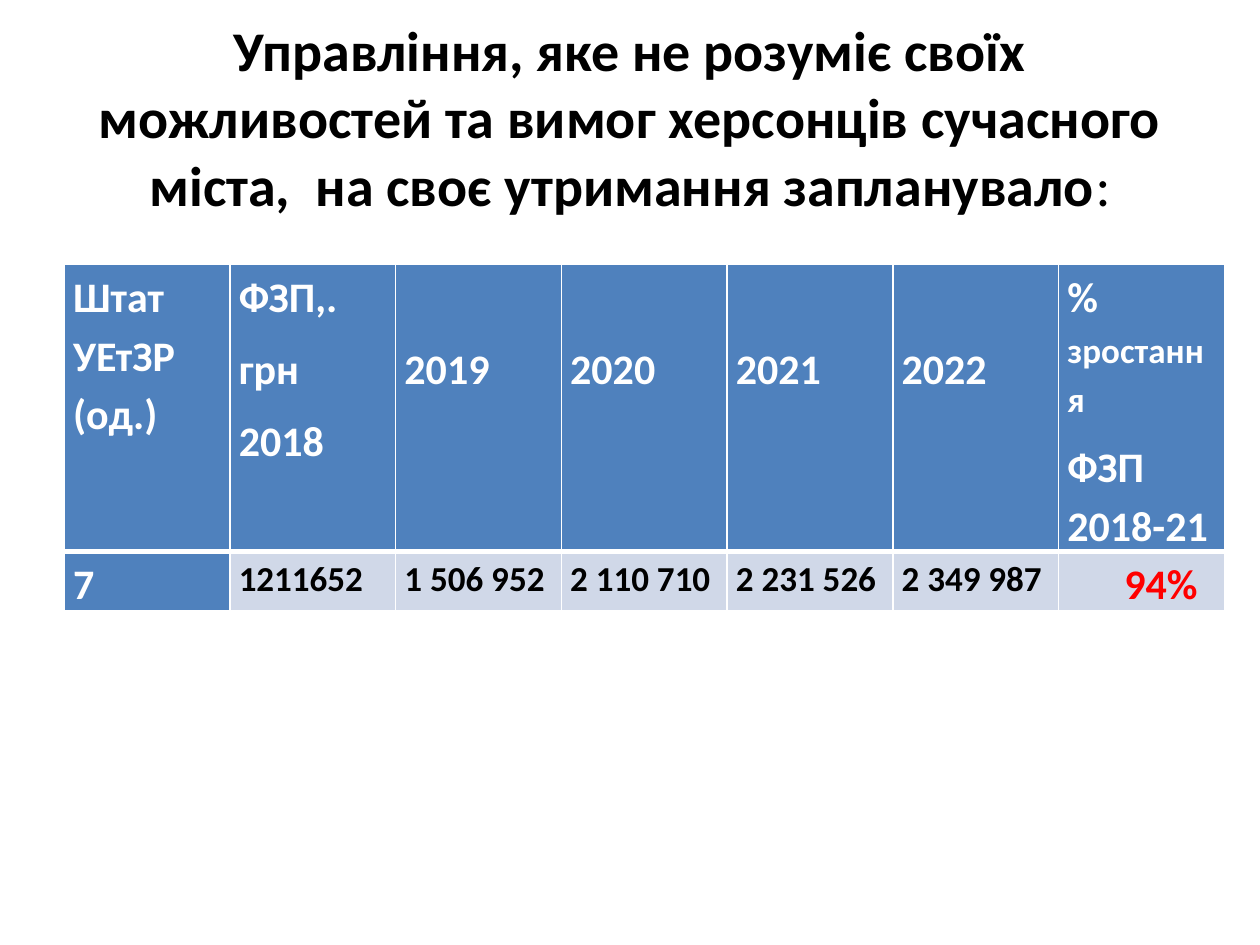
import pptx
import pptx.util
import pptx.dml.color
import pptx.enum.text
import pptx.oxml
import pptx.oxml.ns

Pt = pptx.util.Pt
ALIGN = pptx.enum.text.PP_ALIGN
ANCHOR = pptx.enum.text.MSO_ANCHOR

COLORS = {"black": "000000", "white": "FFFFFF", "red": "FF0000",
          "header": "4F81BD", "body": "D0D8E8"}
FONT = "Calibri"

TITLE = [[("Управління, яке не розуміє своїх можливостей та вимог херсонців "
           "сучасного міста,  на своє утримання запланувало", {}),
          (":", {"bold": False})]]
YEARS = ["2019", "2020", "2021", "2022"]
HEADERS = [
    [[("Штат УЕтЗР (од.)", {})]],
    [[("ФЗП,.", {})], [("грн", {})], [("2018", {})]],
    *[[[(year, {})]] for year in YEARS],
    [[("% ", {}), ("зростання", {"size": 20})], [("ФЗП 2018-21", {})]],
]
STAFF = "7"
PAYROLL = ["1211652", "1 506 952", "2 110 710", "2 231 526", "2 349 987"]
GROWTH = "94%"

TABLE_LEFT, TABLE_TOP, TABLE_WIDTH = 36.72, 151.2, 663.12
ROW_HEIGHTS = [164, 34]
CELL_MARGIN = 5.04
YEAR_DROP = 41.2
GROWTH_INDENT = 32.5


def write(tf, paragraphs, size=24, color="white", bold=True,
          align=ALIGN.JUSTIFY, line=1.15, after=7.5):
    for i, runs in enumerate(paragraphs):
        p = tf.paragraphs[0] if i == 0 else tf.add_paragraph()
        p.alignment, p.line_spacing, p.space_after = align, line, Pt(after)
        for text, extra in runs:
            r = p.add_run()
            r.text = text
            r.font.name = FONT
            r.font.size = Pt(extra.get("size", size))
            r.font.bold = extra.get("bold", bold)
            r.font.color.rgb = pptx.dml.color.RGBColor.from_string(COLORS[color])


def style_cell(cell, fill, top=1, bottom=1):
    tc_pr = cell._tc.get_or_add_tcPr()
    for side, width in (("L", 1), ("R", 1), ("T", top), ("B", bottom)):
        tc_pr.append(pptx.oxml.parse_xml(
            f'<a:ln{side} {pptx.oxml.ns.nsdecls("a")} w="{Pt(width)}"><a:solidFill>'
            f'<a:srgbClr val="{COLORS["white"]}"/></a:solidFill></a:ln{side}>'))
    cell.fill.solid()
    cell.fill.fore_color.rgb = pptx.dml.color.RGBColor.from_string(COLORS[fill])
    cell.margin_left = cell.margin_right = Pt(CELL_MARGIN)
    cell.margin_top = cell.margin_bottom = 0


def add_title(slide):
    tf = slide.shapes.add_textbox(Pt(36), Pt(21.6), Pt(648), Pt(90)).text_frame
    tf.word_wrap = True
    tf.vertical_anchor = ANCHOR.MIDDLE
    write(tf, TITLE, size=32, color="black", align=ALIGN.CENTER, line=1.0, after=0)


def add_payroll_table(slide):
    table = slide.shapes.add_table(
        len(ROW_HEIGHTS), len(HEADERS), Pt(TABLE_LEFT), Pt(TABLE_TOP),
        Pt(TABLE_WIDTH), Pt(sum(ROW_HEIGHTS))).table
    table.first_col = True
    table.horz_banding = False
    for row, height in zip(table.rows, ROW_HEIGHTS):
        row.height = Pt(height)

    for col, paragraphs in enumerate(HEADERS):
        cell = table.cell(0, col)
        style_cell(cell, "header", bottom=3)
        if paragraphs[0][0][0] in YEARS:
            cell.margin_top = Pt(YEAR_DROP)
        write(cell.text_frame, paragraphs)

    formats = [{}] + [{"size": 20, "color": "black"}] * len(PAYROLL) + [{"color": "red"}]
    for col, (text, fmt) in enumerate(zip([STAFF, *PAYROLL, GROWTH], formats)):
        cell = table.cell(1, col)
        style_cell(cell, "body" if col else "header", top=3)
        write(cell.text_frame, [[(text, {})]], **fmt)
    cell.margin_left = Pt(CELL_MARGIN + GROWTH_INDENT)


def main():
    prs = pptx.Presentation()
    prs.slide_width, prs.slide_height = Pt(720), Pt(540)
    slide = prs.slides.add_slide(prs.slide_layouts[6])
    add_title(slide)
    add_payroll_table(slide)
    prs.save("out.pptx")


if __name__ == "__main__":
    main()
